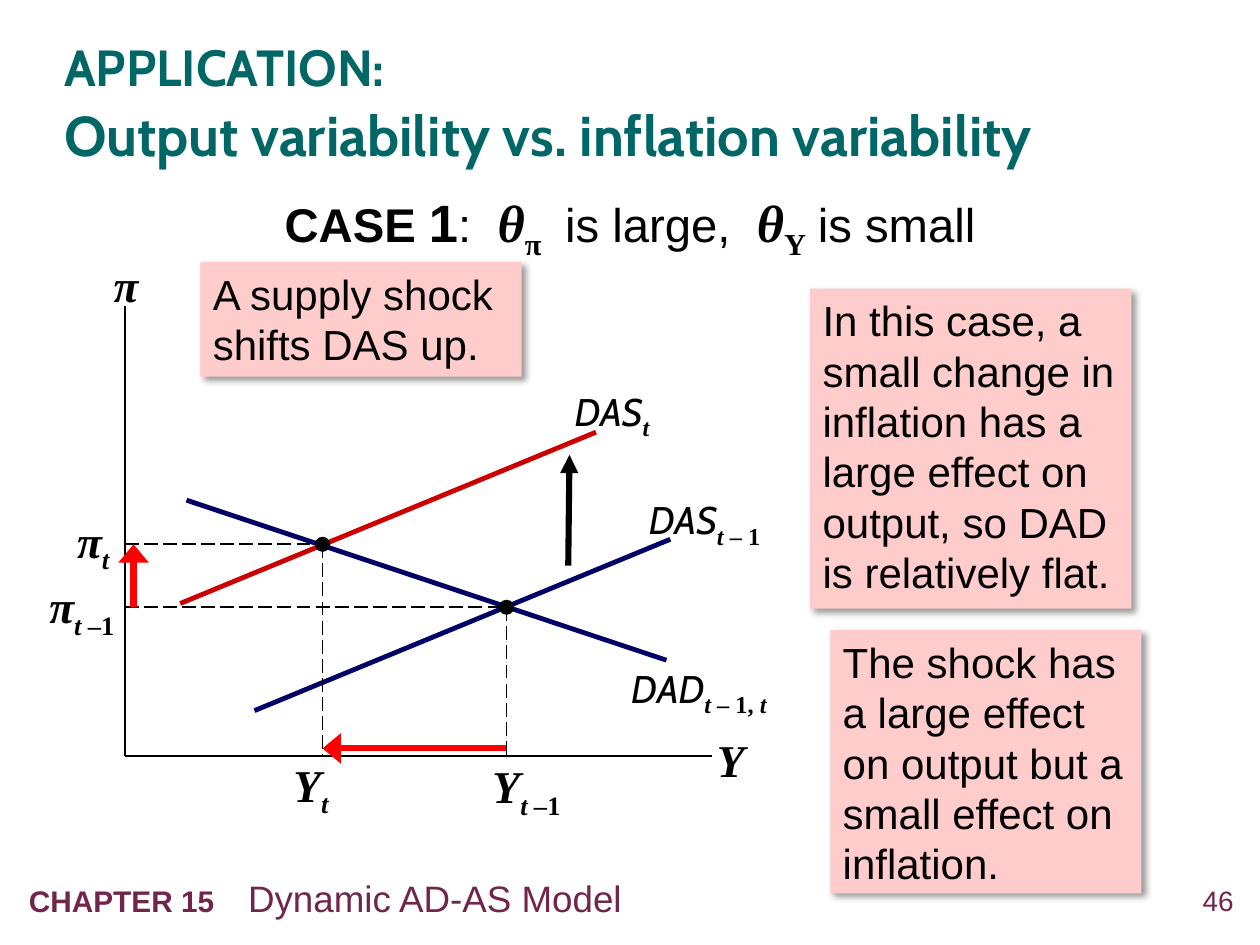
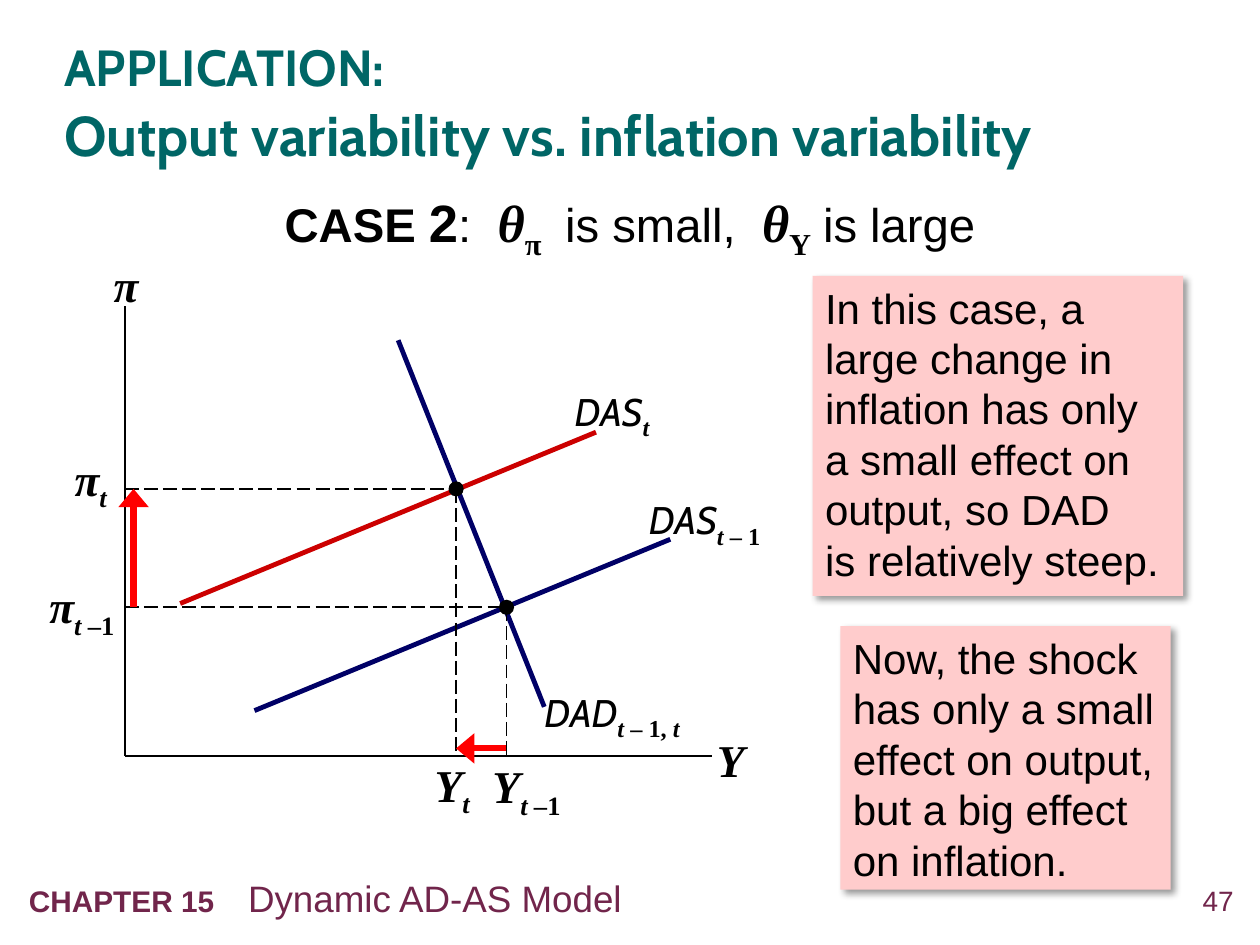
"""Build two slides on output and inflation variability in the dynamic AD-AS model."""
from lxml.etree import SubElement
from pptx import Presentation
from pptx.dml.color import RGBColor
from pptx.enum.dml import MSO_LINE
from pptx.enum.shapes import MSO_CONNECTOR, MSO_SHAPE
from pptx.enum.text import MSO_ANCHOR, PP_ALIGN
from pptx.oxml.ns import qn
from pptx.util import Inches, Pt

HUES = {"ink": "000000", "teal": "006666", "plum": "71254B", "navy": "000066",
        "red": "CC0000", "flame": "FF0000", "pink": "FFCCCC"}
SERIF = "Times New Roman"
FONTS = {
    "head": (29, "Cabin", "teal", True, False, 0),
    "title": (32, "Cabin", "teal", True, False, 0),
    "page": (16, "Arial", "plum", False, False, 0),
    "part": (17, "Arial", "plum", True, False, 0),
    "topic": (21, "Arial", "plum", False, False, 0),
    "case": (27, "Arial", "ink", True, False, 0),
    "count": (30, "Arial", "ink", True, False, 0),
    "plain": (27, "Arial", "ink", False, False, 0),
    "gap": (27, SERIF, "ink", False, False, 0),
    "theta": (30, SERIF, "ink", True, True, 0),
    "index": (30, SERIF, "ink", True, False, -25),
    "var": (26, SERIF, "ink", True, True, 0),
    "time": (26, SERIF, "ink", True, True, -25),
    "lag": (26, SERIF, "ink", True, False, -25),
    "curve": (22, "Cabin", "ink", False, True, 0),
    "sub": (24, SERIF, "ink", True, True, -25),
    "minus": (24, SERIF, "ink", True, False, -25),
    "note": (24, "Arial", "ink", False, False, 0),
}
BREAK = ("break", "")
INSET = (0.1, 0.05, 0.1, 0.05)
FLUSH = (0, 0, 0, 0)
LEFT, BASE = 0.99, 6
OLD = (4.02, 4.82)


class Deck:
    """Hold the style and the current slide."""

    def __init__(self):
        self.prs = Presentation()
        self.prs.slide_width, self.prs.slide_height = Inches(10), Inches(7.5)
        self.slide = None

    def hue(self, name):
        return RGBColor.from_string(HUES[name])

    def fill(self, frame, runs, inset=INSET, align=PP_ALIGN.LEFT, space=None,
             anchor=MSO_ANCHOR.TOP):
        frame.word_wrap = True
        frame.vertical_anchor = anchor
        (frame.margin_left, frame.margin_top,
         frame.margin_right, frame.margin_bottom) = map(Inches, inset)
        para = frame.paragraphs[0]
        para.alignment, para.line_spacing = align, space
        for style, words in runs:
            if style == "break":
                para.add_line_break()
                continue
            size, face, hue, bold, slant, shift = FONTS[style]
            run = para.add_run()
            run.text = words
            font = run.font
            font.size, font.name, font.bold, font.italic = Pt(size), face, bold, slant
            font.color.rgb = self.hue(hue)
            if shift:
                font._element.set("baseline", str(shift * 1000))
        return para

    def text(self, box, runs, **look):
        shape = self.slide.shapes.add_textbox(*map(Inches, box))
        return self.fill(shape.text_frame, runs, **look)

    def shape(self, kind, box, hue):
        shape = self.slide.shapes.add_shape(kind, *map(Inches, box))
        shape.shadow.inherit = False
        shape.fill.solid()
        shape.fill.fore_color.rgb = self.hue(hue)
        shape.line.fill.background()
        return shape

    def line(self, start, end, hue="ink", width=1, dash=None, head=None):
        line = self.slide.shapes.add_connector(
            MSO_CONNECTOR.STRAIGHT, *map(Inches, (*start, *end)))
        line.line.color.rgb = self.hue(hue)
        line.line.width = Pt(width)
        if dash:
            line.line.dash_style = dash
        if head:
            SubElement(line.line._get_or_add_ln(), qn("a:tailEnd"),
                       type="triangle", w=head, len="med")
        SubElement(line._element.spPr, qn("a:effectLst"))

    def curve(self, start, end, hue, spot, runs):
        self.line(start, end, hue, 2.75)
        self.text(spot, runs, inset=(0, 0, 0, 0.1))

    def arrow(self, start, end, hue="flame", head="lg"):
        self.line(start, end, hue, 3.5, head=head)

    def point(self, spot, out, price, lag):
        x, y = spot
        for start, end in (((LEFT, y), spot), (spot, (x, BASE))):
            self.line(start, end, dash=MSO_LINE.LONG_DASH)
        self.shape(MSO_SHAPE.OVAL, (x - 0.06, y - 0.06, 0.12, 0.12), "ink")
        self.text(out, [("var", "Y"), *lag])
        self.text(price, [("var", "π"), *lag], align=PP_ALIGN.CENTER)

    def note(self, box, *lines):
        shape = self.shape(MSO_SHAPE.RECTANGLE, box, "pink")
        glow = SubElement(shape._element.spPr.find(qn("a:effectLst")),
                          qn("a:outerShdw"), blurRad=str(Pt(4)), dist=str(Pt(3)),
                          dir="2700000", algn="tl", rotWithShape="0")
        tint = SubElement(glow, qn("a:srgbClr"), val=HUES["ink"])
        SubElement(tint, qn("a:alpha"), val="40000")
        runs = [("note", lines[0])]
        for words in lines[1:]:
            runs += [BREAK, ("note", words)]
        self.fill(shape.text_frame, runs)

    def frame(self, page, case, first, second):
        self.slide = self.prs.slides.add_slide(self.prs.slide_layouts[6])
        self.text((9.24, 7.01, 0.55, 0.32), [("page", page)], inset=FLUSH,
                  align=PP_ALIGN.RIGHT)
        foot = self.text((0.13, 6.9, 8.18, 0.45),
                         [("part", "CHAPTER 15\t"), ("topic", "Dynamic AD-AS Model")])
        tabs = SubElement(foot._p.get_or_add_pPr(), qn("a:tabLst"))
        SubElement(tabs, qn("a:tab"), pos=str(Inches(1.74)), algn="l")
        self.text((0.51, 0.28, 9.23, 1.03),
                  [("head", "APPLICATION:"), BREAK,
                   ("title", "Output variability vs. inflation variability")],
                  inset=FLUSH, space=1.05, anchor=MSO_ANCHOR.MIDDLE)
        self.text((0, 1.43, 10, 0.66),
                  [("case", "CASE "), ("count", case), ("plain", ":  "),
                   ("theta", "θ"), ("index", "π"), ("gap", "  "),
                   ("plain", f"is {first},  "), ("theta", "θ"), ("index", "Y"),
                   ("gap", " "), ("plain", f"is {second}")],
                  align=PP_ALIGN.CENTER, space=1.05)

    def graph(self, start, end, spot, new, out, price):
        self.line((LEFT, 2.43), (LEFT, BASE))
        self.line((LEFT, BASE), (5.65, BASE))
        self.text((5.69, 5.81, 0.45, 0.49), [("var", "Y")], inset=(0, 0, 0, 0.05))
        self.text((0.71, 1.99, 0.58, 0.54), [("var", "π")], align=PP_ALIGN.CENTER)
        das = [("curve", "DAS"), ("sub", "t")]
        self.curve(start, end, "navy", (*spot, 1.33, 0.47),
                   [("curve", "DAD"), ("sub", "t"), ("minus", " – 1, "), ("sub", "t")])
        self.curve((1.43, 4.79), (4.73, 3.43), "red", (4.56, 3.05, 0.79, 0.47), das)
        self.curve((2.02, 5.64), (5.32, 4.28), "navy", (5.15, 3.91, 1.05, 0.47),
                   das + [("minus", " – 1")])
        self.point(OLD, (3.81, 5.97, 0.85, 0.54), (0.25, 4.54, 0.8, 0.54),
                   [("time", "t –"), ("lag", "1")])
        self.point(new, (*out, 0.55, 0.54), (*price, 0.54, 0.54), [("time", "t")])
        self.arrow((1.06, OLD[1]), (1.06, new[1]))
        self.arrow((OLD[0], 5.94), (new[0], 5.94))


def main():
    deck = Deck()

    deck.frame("46", "1", "large", "small")
    deck.graph((1.48, 3.97), (5.29, 5.24), (5.01, 5.25),
               (2.56, 4.32), (2.23, 5.96), (0.47, 4.02))
    deck.arrow((4.51, 4.49), (4.52, 3.61), "ink", "med")
    deck.note((1.59, 2.08, 2.55, 0.91), "A supply shock shifts DAS up.")
    deck.note((6.43, 2.29, 2.55, 2.54),
              "In this case, a small change in inflation has a large effect on "
              "output, so DAD ", "is relatively flat.")
    deck.note((6.59, 5, 2.47, 2.09),
              "The shock has a large effect on output but a small effect on inflation.")

    deck.frame("47", "2", "small", "large")
    deck.graph((3.16, 2.7), (4.32, 5.61), (4.32, 5.44),
               (3.62, 3.88), (3.35, 5.96), (0.45, 3.53))
    deck.note((6.45, 2.19, 2.94, 2.54),
              "In this case, a large change in inflation has only a small effect on "
              "output, so DAD ", "is relatively steep.")
    deck.note((6.67, 4.97, 2.62, 2.09),
              "Now, the shock has only a small effect on output, "
              "but a big effect on inflation.")

    deck.prs.save("out.pptx")


if __name__ == "__main__":
    main()
